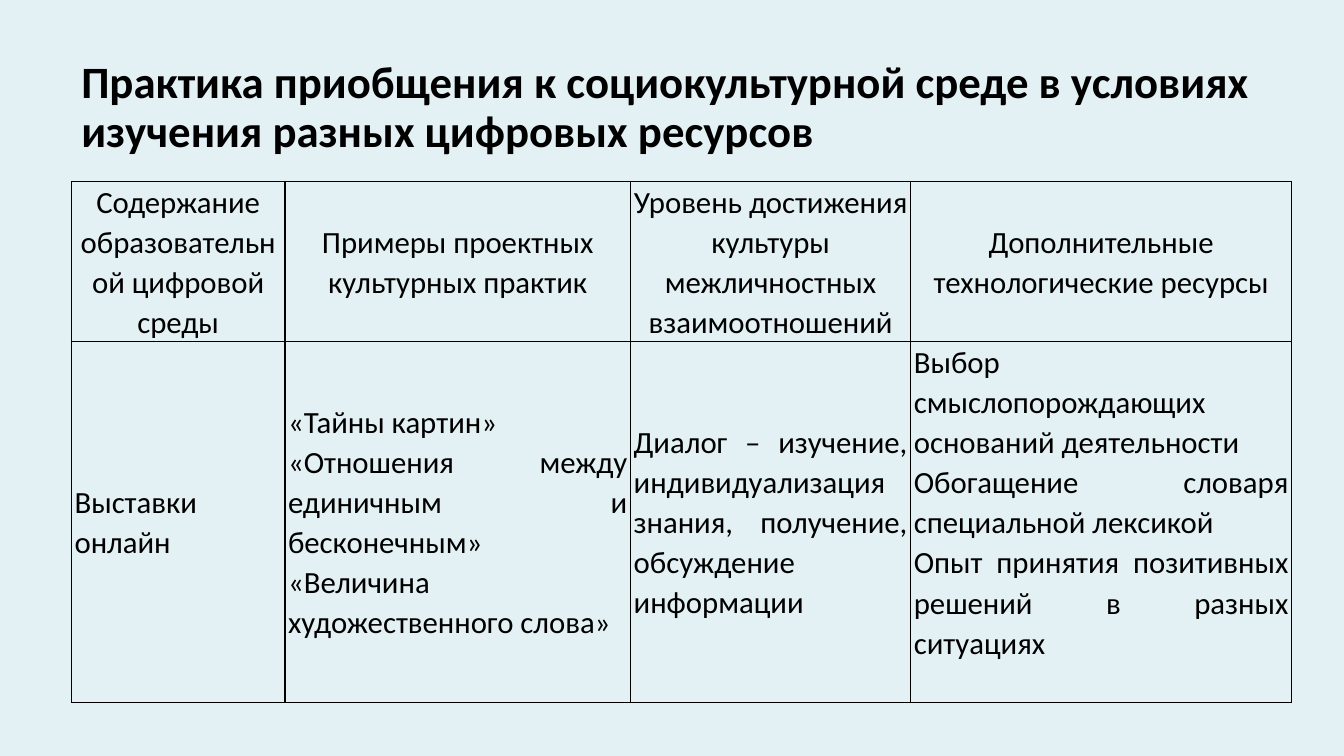
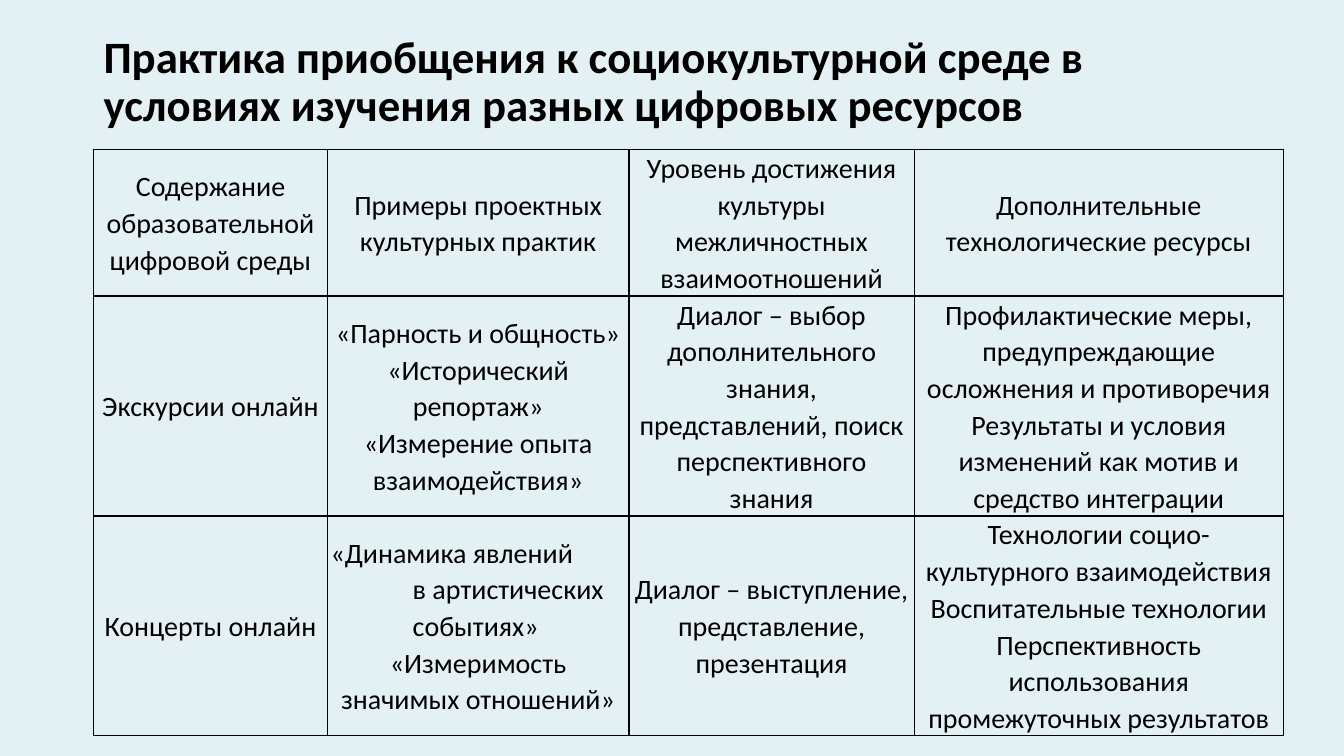
from lxml.etree import SubElement
from pptx import Presentation
from pptx.dml.color import RGBColor
from pptx.enum.text import MSO_ANCHOR, PP_ALIGN
from pptx.oxml.ns import qn
from pptx.util import Cm, Pt

FONT = "Calibri"
BACKGROUND = "E4F1F4"
INK = "000000"
TITLE = "Практика приобщения к социокультурной среде в условиях изучения разных цифровых ресурсов"
HEADERS = [
    "Содержание образовательной цифровой среды",
    "Примеры проектных культурных практик",
    "Уровень достижения культуры межличностных взаимоотношений",
    "Дополнительные технологические ресурсы",
]
EXHIBITIONS = [
    "Выставки онлайн",
    "«Тайны картин»\n«Отношения между единичным и бесконечным»\n«Величина художественного слова»",
    "Диалог – изучение, индивидуализация знания, получение, обсуждение информации",
    "Выбор смыслопорождающих оснований деятельности\n"
    "Обогащение словаря специальной лексикой\n"
    "Опыт принятия позитивных решений в разных ситуациях",
]
EXCURSIONS = [
    "Экскурсии онлайн",
    "«Парность и общность»\n«Исторический репортаж»\n«Измерение опыта взаимодействия»",
    "Диалог – выбор дополнительного знания, представлений, поиск перспективного знания",
    "Профилактические меры, предупреждающие осложнения и противоречия\n"
    "Результаты и условия изменений как мотив и средство интеграции",
]
CONCERTS = [
    "Концерты онлайн",
    "«Динамика явлений\vв артистических событиях»\n«Измеримость значимых отношений»",
    "Диалог – выступление, представление, презентация",
    "Технологии социо-культурного взаимодействия\n"
    "Воспитательные технологии\n"
    "Перспективность использования промежуточных результатов",
]


def rgb(value):
    return RGBColor.from_string(value)


def write(tf, text, size, bold=False, align=PP_ALIGN.LEFT, spacing=1.0):
    tf.text = text
    tf.word_wrap = True
    for p in tf.paragraphs:
        p.alignment = align
        p.line_spacing = spacing
        for r in p.runs:
            r.font.name = FONT
            r.font.size = Pt(size)
            r.font.bold = bold
            r.font.color.rgb = rgb(INK)


def hang(p, indent):
    p.alignment = PP_ALIGN.LEFT
    pPr = p._p.get_or_add_pPr()
    pPr.set("marL", str(indent))
    pPr.set("indent", str(-indent))


def add_slide(prs, left, top, width, height):
    s = prs.slides.add_slide(prs.slide_layouts[6])
    s.background.fill.solid()
    s.background.fill.fore_color.rgb = rgb(BACKGROUND)
    sp = s.shapes.add_textbox(Cm(left), Cm(top), Cm(width), Cm(height))
    sp.text_frame.vertical_anchor = MSO_ANCHOR.MIDDLE
    write(sp.text_frame, TITLE, 32, bold=True, spacing=0.9)
    return s


def format_cell(cell):
    cell.vertical_anchor = MSO_ANCHOR.MIDDLE
    cell.margin_left = cell.margin_right = Cm(0.08)
    cell.margin_top = cell.margin_bottom = 0
    tcPr = cell._tc.get_or_add_tcPr()
    for side in ("a:lnL", "a:lnR", "a:lnT", "a:lnB"):
        ln = SubElement(tcPr, qn(side), w=str(Pt(1)))
        fill = SubElement(ln, qn("a:solidFill"))
        SubElement(fill, qn("a:srgbClr"), val=INK)
    cell.fill.background()


def add_grid(s, left, top, widths, heights, rows, size, body_align):
    frame = s.shapes.add_table(len(rows), len(widths), Cm(left), Cm(top),
                               Cm(sum(widths)), Cm(sum(heights)))
    table = frame.table
    table.horz_banding = False
    for column, width in zip(table.columns, widths):
        column.width = Cm(width)
    for i, (row, height, texts) in enumerate(zip(table.rows, heights, rows)):
        row.height = Cm(height)
        align = body_align if i else PP_ALIGN.CENTER
        for cell, text in zip(row.cells, texts):
            write(cell.text_frame, text, size, align=align, spacing=1.07)
            format_cell(cell)
    return table


def main():
    prs = Presentation()
    prs.slide_width, prs.slide_height = Cm(33.87), Cm(19.05)

    s = add_slide(prs, 1.8, 0.89, 30.78, 3.68)
    table = add_grid(s, 1.8, 4.57, [5.38, 8.71, 7.06, 9.6], [4.03, 9.1],
                     [HEADERS, EXHIBITIONS], 22, PP_ALIGN.JUSTIFY)
    table.cell(1, 3).margin_bottom = Cm(1)

    s = add_slide(prs, 2.36, 0.79, 29.21, 2.59)
    table = add_grid(s, 2.36, 3.76, [5.89, 7.6, 7.19, 9.3], [3.7, 5.54, 5.54],
                     [HEADERS, EXCURSIONS, CONCERTS], 20, PP_ALIGN.CENTER)
    hang(table.cell(2, 1).text_frame.paragraphs[0], Cm(2.07))

    prs.save("out.pptx")


if __name__ == "__main__":
    main()
